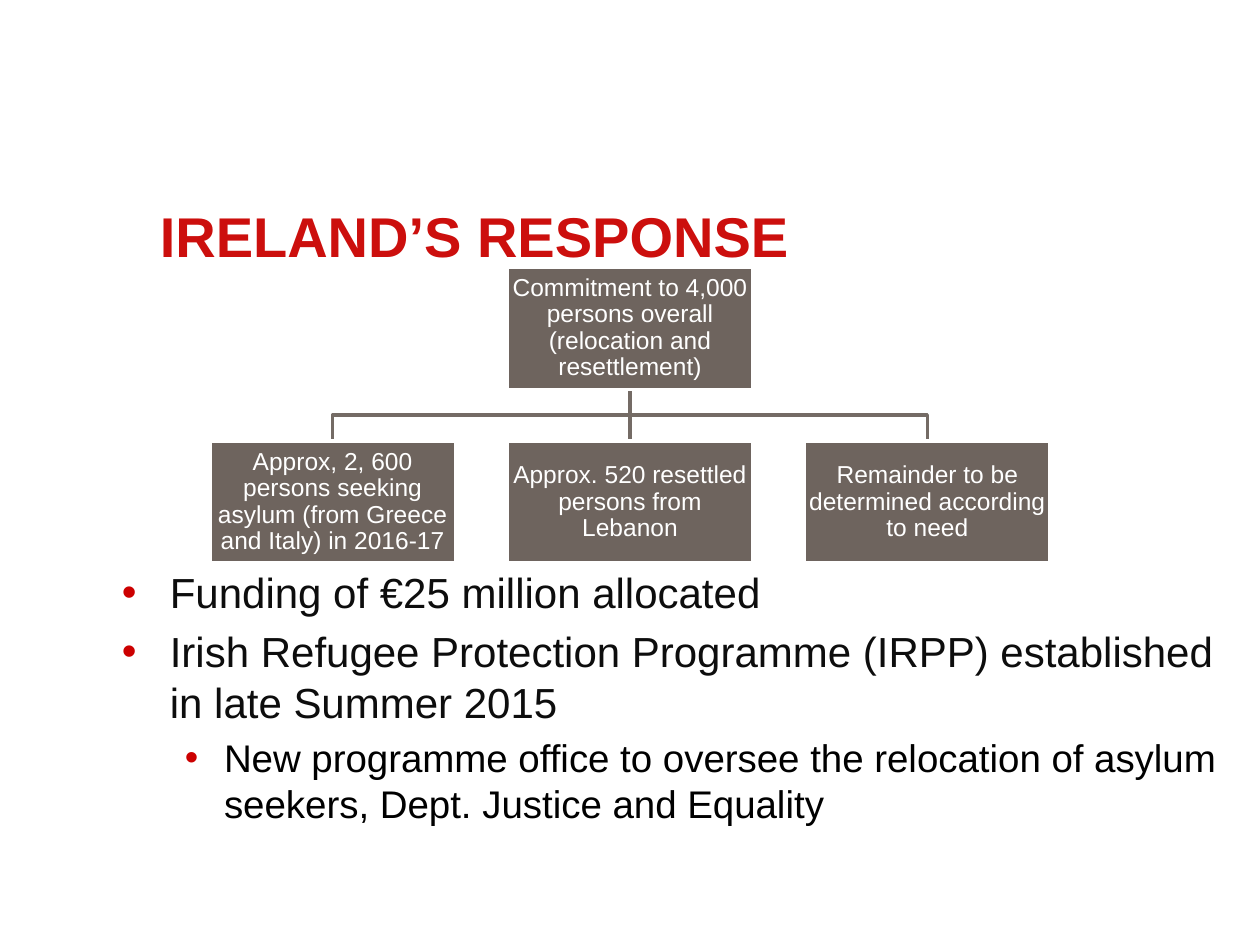
"""Build a slide on Ireland's response: a commitment chart above bullet points."""
from lxml import etree
from pptx import Presentation
from pptx import util as u
from pptx.dml.color import RGBColor
from pptx.enum import shapes, text
from pptx.oxml import ns

RED = RGBColor(0xCC, 0x0F, 0x0D)
BULLET_RED = RGBColor(0xCC, 0x00, 0x00)
INK = RGBColor(0x0D, 0x0D, 0x0D)
BLACK = RGBColor(0x00, 0x00, 0x00)
WHITE = RGBColor(0xFF, 0xFF, 0xFF)
BOX_FILL = RGBColor(0x6E, 0x64, 0x5E)
LINE_COLOR = RGBColor(0x74, 0x6B, 0x65)

BOX_WIDTH, BOX_HEIGHT = 1.95, 0.97
CENTER_X, COLUMN_STEP = 5, 2.36
ROOT_TOP, CHILD_TOP = 2.12, 3.5
ROOT_BOTTOM = ROOT_TOP + BOX_HEIGHT
BRANCH_Y = (ROOT_BOTTOM + CHILD_TOP) / 2

ROOT = "Commitment to 4,000 persons overall (relocation and resettlement)"
CHILDREN = [
    "Approx, 2, 600 persons seeking asylum (from Greece and Italy) in 2016-17",
    "Approx. 520 resettled persons from Lebanon",
    "Remainder to be determined according to need",
]
TOP_LEVEL = {"level": 0, "left": 0.38, "hanging": 0.38, "size": 24, "color": INK}
SUB_LEVEL = {"level": 1, "left": 0.81, "hanging": 0.31, "size": 22, "color": BLACK}
POINTS = [
    ("Funding of €25 million allocated", TOP_LEVEL),
    ("Irish Refugee Protection Programme (IRPP) established in late Summer 2015", TOP_LEVEL),
    ("New programme office to oversee the relocation of asylum seekers, "
     "Dept. Justice and Equality", SUB_LEVEL),
]


class SlideBuilder:
    def __init__(self, slide, font_name):
        self.slide = slide
        self.font_name = font_name

    def apply(self, target, values):
        for name, value in values.items():
            setattr(target, name, value)

    def style_font(self, paragraph, size, color, bold=False):
        self.apply(paragraph.font, {"name": self.font_name, "size": u.Pt(size), "bold": bold})
        paragraph.font.color.rgb = color

    def style_line(self, line, color):
        line.color.rgb = color
        line.width = u.Pt(2)

    def text_frame(self, left, top, width, height):
        position = [u.Inches(value) for value in (left, top, width, height)]
        frame = self.slide.shapes.add_textbox(*position).text_frame
        frame.word_wrap = True
        return frame

    def title(self, wording, *position):
        paragraph = self.text_frame(*position).paragraphs[0]
        paragraph.text = wording
        self.style_font(paragraph, 32, RED, bold=True)

    def bullets(self, points, *position):
        frame = self.text_frame(*position)
        for index, (wording, style) in enumerate(points):
            paragraph = frame.add_paragraph() if index else frame.paragraphs[0]
            paragraph.text = wording
            paragraph.level = style["level"]
            if index:
                paragraph.space_before = u.Pt(0.2 * style["size"])
            self.add_bullet(paragraph, style)
            self.style_font(paragraph, style["size"], style["color"])

    def add_bullet(self, paragraph, style):
        properties = paragraph._p.get_or_add_pPr()
        properties.set("marL", str(u.Inches(style["left"])))
        properties.set("indent", str(-u.Inches(style["hanging"])))
        color = etree.SubElement(properties, ns.qn("a:buClr"))
        etree.SubElement(color, ns.qn("a:srgbClr"), val=str(BULLET_RED))
        etree.SubElement(properties, ns.qn("a:buFont"), typeface=self.font_name)
        etree.SubElement(properties, ns.qn("a:buChar"), char="•")

    def box(self, wording, center_x, top):
        shape = self.slide.shapes.add_shape(
            shapes.MSO_SHAPE.RECTANGLE, u.Inches(center_x - BOX_WIDTH / 2), u.Inches(top),
            u.Inches(BOX_WIDTH), u.Inches(BOX_HEIGHT))
        shape.shadow.inherit = False
        shape.fill.solid()
        shape.fill.fore_color.rgb = BOX_FILL
        self.style_line(shape.line, WHITE)
        frame = shape.text_frame
        self.apply(frame, {"word_wrap": True, "vertical_anchor": text.MSO_ANCHOR.MIDDLE})
        sides = ("left", "top", "right", "bottom")
        self.apply(frame, {f"margin_{side}": u.Inches(0.01) for side in sides})
        paragraph = frame.paragraphs[0]
        paragraph.text = wording
        self.apply(paragraph, {"alignment": text.PP_ALIGN.CENTER, "line_spacing": 0.9})
        self.style_font(paragraph, 14, WHITE)
        return shape

    def branch(self, child_x):
        builder = self.slide.shapes.build_freeform(
            u.Inches(CENTER_X), u.Inches(ROOT_BOTTOM), scale=1.0)
        corners = [(CENTER_X, BRANCH_Y), (child_x, BRANCH_Y), (child_x, CHILD_TOP)]
        builder.add_line_segments([(u.Inches(x), u.Inches(y)) for x, y in corners], close=False)
        shape = builder.convert_to_shape()
        shape.shadow.inherit = False
        shape.fill.background()
        self.style_line(shape.line, LINE_COLOR)

    def stem(self):
        connector = self.slide.shapes.add_connector(
            shapes.MSO_CONNECTOR.STRAIGHT, u.Inches(CENTER_X), u.Inches(ROOT_BOTTOM),
            u.Inches(CENTER_X), u.Inches(CHILD_TOP))
        self.style_line(connector.line, LINE_COLOR)
        etree.SubElement(connector._element.spPr, ns.qn("a:effectLst"))
        return connector

    def hierarchy(self, root, children):
        columns = [CENTER_X + step * COLUMN_STEP for step in (-1, 0, 1)]
        self.branch(columns[2])
        stem = self.stem()
        self.branch(columns[0])
        root_box = self.box(root, CENTER_X, ROOT_TOP)
        child_boxes = [self.box(child, x, CHILD_TOP) for child, x in zip(children, columns)]
        stem.begin_connect(root_box, 2)
        stem.end_connect(child_boxes[1], 0)


def main():
    presentation = Presentation()
    presentation.slide_width, presentation.slide_height = u.Inches(10), u.Inches(7.5)
    slide = presentation.slides.add_slide(presentation.slide_layouts[6])
    builder = SlideBuilder(slide, "Arial")
    builder.title("IRELAND’S RESPONSE", 1.17, 1.55, 8.42, 0.87)
    builder.bullets(POINTS, 0.87, 4.45, 9.13, 2.93)
    builder.hierarchy(ROOT, CHILDREN)
    presentation.save("out.pptx")


if __name__ == "__main__":
    main()
